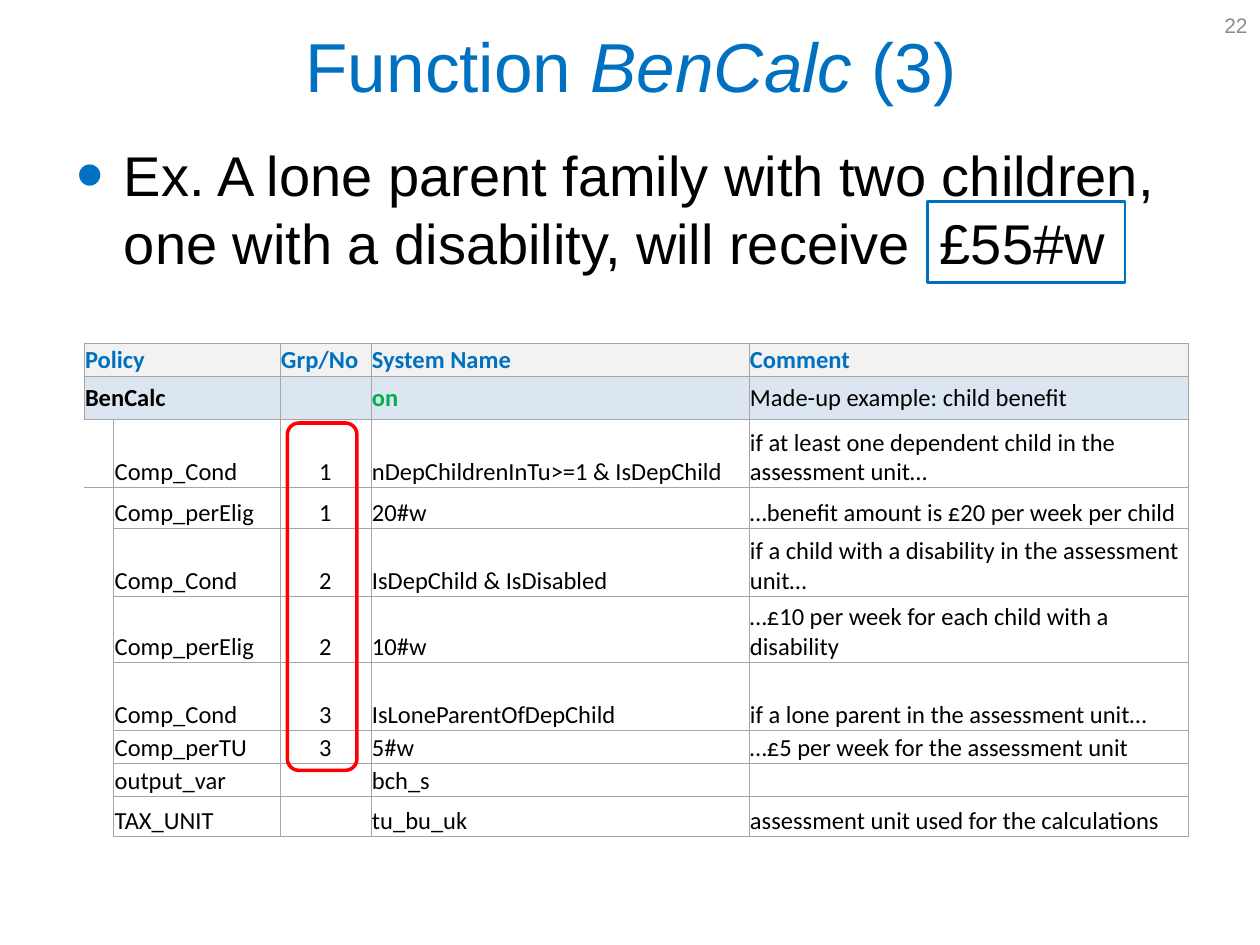
"""Build the slide that explains the BenCalc function with a worked child benefit example."""
import pptx
import pptx.util
import pptx.dml.color
import pptx.enum.shapes
import pptx.enum.text
import pptx.oxml.ns
from lxml import etree

Pt = pptx.util.Pt
ALIGN = pptx.enum.text.PP_ALIGN
ANCHOR = pptx.enum.text.MSO_ANCHOR
SHAPE = pptx.enum.shapes.MSO_SHAPE

COLORS = {"blue": "0070C0", "black": "000000", "gray": "8C8C8C", "green": "00B050",
          "red": "FF0000", "white": "FFFFFF", "header": "F2F2F2", "band": "DCE6F1",
          "border": "A6A6A6"}
TITLE = [("Function ", False), ("BenCalc", True), (" (3)", False)]
EXAMPLE = "Ex. A lone parent family with two children, one with a disability, will receive"
ANSWER = "£55#w"
PAGE_NUMBER = "22"

TABLE_LEFT, TABLE_TOP = 48, 196.2
COLUMN_WIDTHS = [17, 95, 52, 216, 251]
ROW_HEIGHTS = [18.9, 24.5, 38.9, 23.3, 38.9, 37.7, 38.9, 18.9, 18.9, 23]
ROWS = [
    ("Policy", "", "Grp/No", "System Name", "Comment"),
    ("BenCalc", "", "", "on", "Made-up example: child benefit"),
    ("", "Comp_Cond", "1", "nDepChildrenInTu>=1 & IsDepChild",
     "if at least one dependent child in the assessment unit…"),
    ("", "Comp_perElig", "1", "20#w", "…benefit amount is £20 per week per child"),
    ("", "Comp_Cond", "2", "IsDepChild & IsDisabled",
     "if a child with a disability in the assessment unit…"),
    ("", "Comp_perElig", "2", "10#w", "…£10 per week for each child with a disability"),
    ("", "Comp_Cond", "3", "IsLoneParentOfDepChild",
     "if a lone parent in the assessment unit…"),
    ("", "Comp_perTU", "3", "5#w", "…£5 per week for the assessment unit"),
    ("", "output_var", "", "bch_s", ""),
    ("", "TAX_UNIT", "", "tu_bu_uk", "assessment unit used for the calculations"),
]
HEADING_ROWS = 2
GROUP_COLUMN = 2
NO_STYLE = "{2D5ABB26-0587-4C30-8999-92F81FD0307C}"


def color(name):
    return pptx.dml.color.RGBColor.from_string(COLORS[name])


def add_element(parent, tag, **attributes):
    return etree.SubElement(parent, pptx.oxml.ns.qn(tag), attributes)


def set_font(font, size, color_name, name="Arial", bold=None):
    font.name, font.size, font.bold = name, Pt(size), bold
    font.color.rgb = color(color_name)


def add_text(page, place, size, color_name, align, anchor):
    frame = page.shapes.add_textbox(*map(Pt, place)).text_frame
    frame.word_wrap = True
    frame.vertical_anchor = anchor
    para = frame.paragraphs[0]
    para.alignment = align
    set_font(para.font, size, color_name)
    return para


def add_bullet(para, indent):
    properties = para._p.get_or_add_pPr()
    properties.set("marL", str(Pt(indent)))
    properties.set("indent", str(-Pt(indent)))
    bullet_color = etree.Element(pptx.oxml.ns.qn("a:buClr"))
    add_element(bullet_color, "a:srgbClr", val=COLORS["blue"])
    properties.insert(0, bullet_color)
    for position, (tag, key, value) in enumerate([
            ("a:buSzPct", "val", "140000"), ("a:buFont", "typeface", "Arial"),
            ("a:buChar", "char", "•")], start=1):
        properties.insert(position, etree.Element(pptx.oxml.ns.qn(tag), {key: value}))


def add_outline(page, kind, place, color_name, width):
    box = page.shapes.add_shape(kind, *map(Pt, place))
    box.shadow.inherit = False
    box.fill.background()
    box.line.color.rgb = color(color_name)
    box.line.width = Pt(width)
    return box


def set_borders(cell, sides):
    properties = cell._tc.get_or_add_tcPr()
    for side in sides:
        line = add_element(properties, f"a:ln{side}", w=str(Pt(0.5)))
        add_element(add_element(line, "a:solidFill"), "a:srgbClr", val=COLORS["border"])


def cell_color(row, column):
    if row == 0:
        return "blue"
    return "green" if (row, column) == (1, 3) else "black"


def style_cell(cell, row, column, text):
    heading = row < HEADING_ROWS
    corner = column == 0 and not heading
    cell.margin_left = cell.margin_right = cell.margin_top = Pt(0.6)
    cell.margin_bottom = 0
    cell.vertical_anchor = ANCHOR.MIDDLE if heading else ANCHOR.BOTTOM
    sides = "LRTB"
    if corner:
        sides = "RT" if row == HEADING_ROWS else "R"
    set_borders(cell, sides)
    if heading or corner:
        cell.fill.solid()
        cell.fill.fore_color.rgb = color("white" if corner else ("header", "band")[row])
    else:
        cell.fill.background()
    para = cell.text_frame.paragraphs[0]
    if not text:
        add_element(para._p, "a:endParaRPr", sz="1400")
        return
    para.text = text
    para.alignment = ALIGN.CENTER if column == GROUP_COLUMN and not heading else ALIGN.LEFT
    bold = row == 0 or (row == 1 and column < 4)
    set_font(para.font, 14, cell_color(row, column), "Calibri", bold)


def add_policy_table(page):
    frame = page.shapes.add_table(len(ROWS), len(COLUMN_WIDTHS), Pt(TABLE_LEFT), Pt(TABLE_TOP),
                                  Pt(sum(COLUMN_WIDTHS)), Pt(sum(ROW_HEIGHTS)))
    table = frame.table
    table.first_row = table.horz_banding = False
    table._tbl.tblPr.find(pptx.oxml.ns.qn("a:tableStyleId")).text = NO_STYLE
    for column, width in zip(table.columns, COLUMN_WIDTHS):
        column.width = Pt(width)
    for row, height in zip(table.rows, ROW_HEIGHTS):
        row.height = Pt(height)
    for row, texts in enumerate(ROWS):
        for column, text in enumerate(texts):
            style_cell(table.cell(row, column), row, column, text)
    for row in range(HEADING_ROWS):
        table.cell(row, 0).merge(table.cell(row, 1))


def main():
    deck = pptx.Presentation()
    deck.slide_width, deck.slide_height = Pt(720), Pt(540)
    page = deck.slides.add_slide(deck.slide_layouts[6])

    title = add_text(page, (36.7, 9.4, 648, 55.4), 39.6, "blue", ALIGN.CENTER, ANCHOR.MIDDLE)
    for text, italic in TITLE:
        span = title.add_run()
        span.text = text
        span.font.italic = italic

    example = add_text(page, (36.7, 77, 648, 356), 32, "black", ALIGN.LEFT, ANCHOR.TOP)
    add_bullet(example, 27)
    example.text = EXAMPLE

    number = add_text(page, (552, 0, 168, 28.8), 12, "gray", ALIGN.RIGHT, ANCHOR.MIDDLE)
    number.text = PAGE_NUMBER

    add_policy_table(page)

    answer = add_outline(page, SHAPE.RECTANGLE, (530, 115.3, 113, 46), "blue", 1.5)
    answer.fill.solid()
    answer.fill.fore_color.rgb = color("white")
    answer.text_frame.vertical_anchor = ANCHOR.TOP
    para = answer.text_frame.paragraphs[0]
    para.text = ANSWER
    para.alignment = ALIGN.LEFT
    set_font(para.font, 32, "black")

    add_outline(page, SHAPE.ROUNDED_RECTANGLE, (164.2, 241.7, 39.8, 198.5), "red", 2)
    deck.save("out.pptx")


if __name__ == "__main__":
    main()
